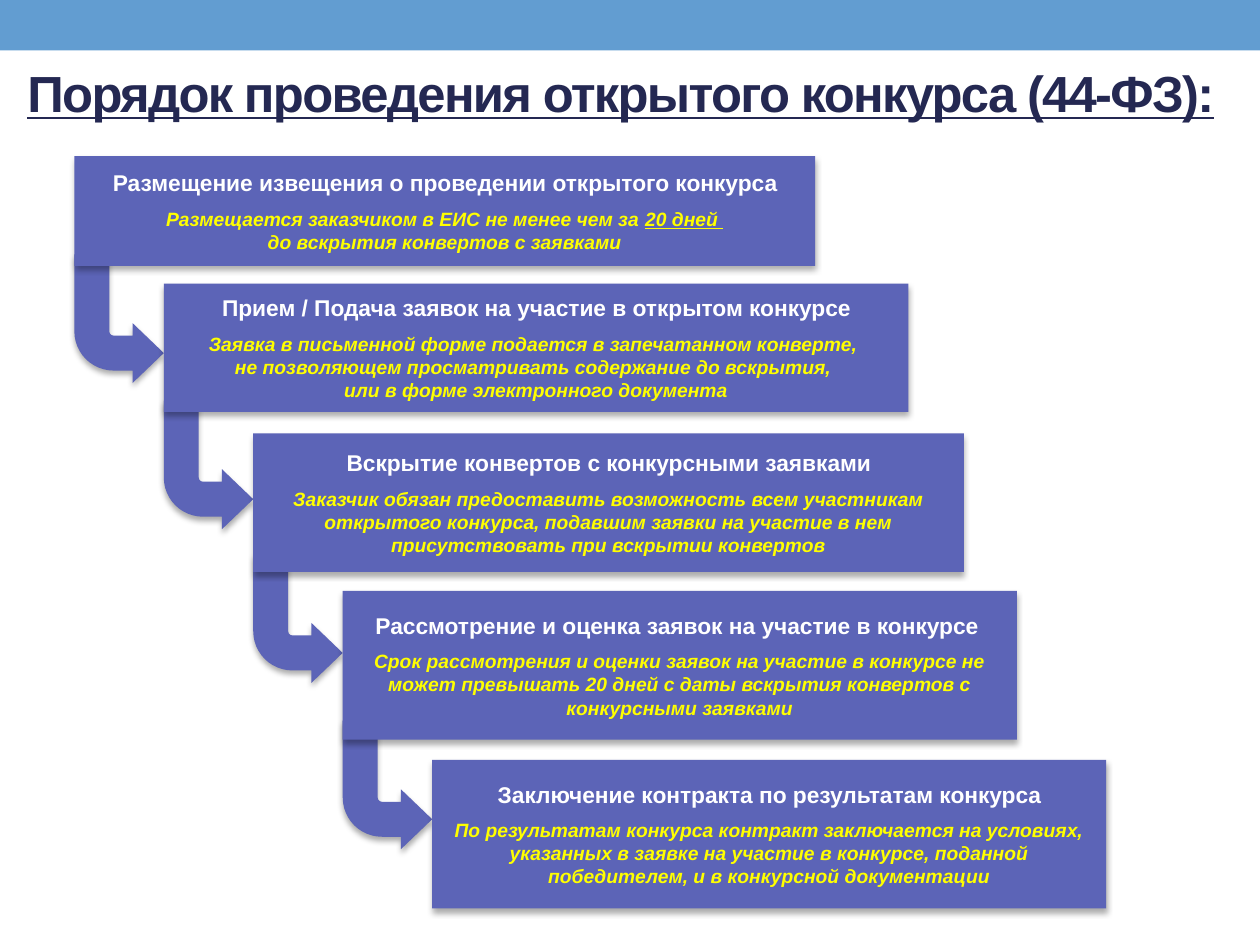
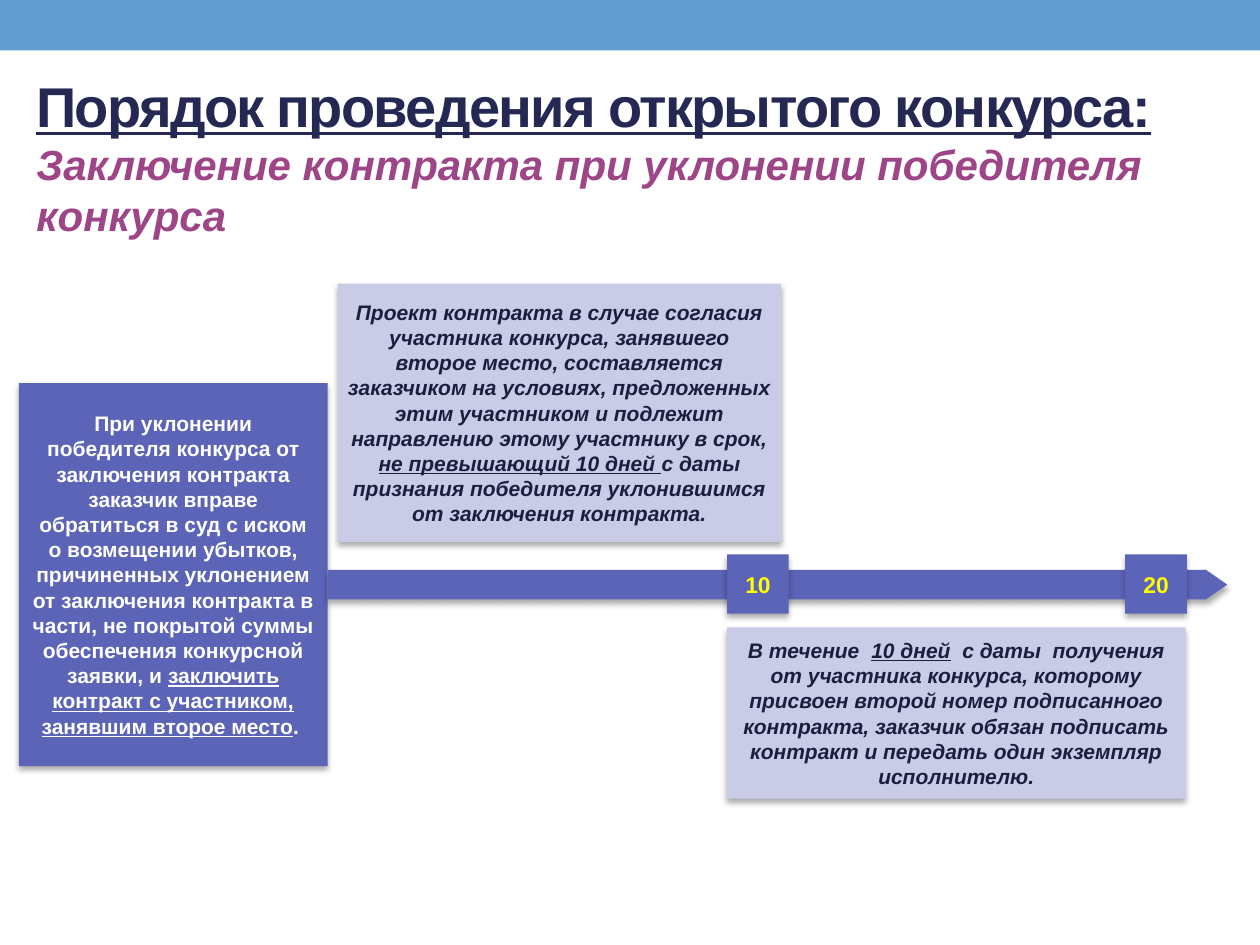
from lxml.etree import SubElement
from pptx import Presentation
from pptx.dml.color import RGBColor
from pptx.enum.shapes import MSO_SHAPE
from pptx.enum.text import MSO_ANCHOR, PP_ALIGN
from pptx.oxml.ns import qn
from pptx.util import Pt

PX = 9144
FONT = "Arial"
SKY, INDIGO, LAVENDER = "629DD1", "5C64B7", "C9CBE7"
NAVY, INK, PLUM = "242852", "1B1E3E", "9D4586"
WHITE, YELLOW, BLACK = "FFFFFF", "FFFF00", "000000"

STEP_SHIFT = 71
BEND_HEIGHT = 102
BEND_TOPS = (202, 318, 440, 572)

STEPS = [
    (124, 588, 87, "Размещение извещения о проведении открытого конкурса",
     [("Размещается заказчиком в ЕИС не менее чем за ", False), ("20 дней \v", True),
      ("до вскрытия конвертов с заявками", False)]),
    (225, 591, 102, "Прием / Подача заявок на участие в открытом конкурсе",
     [("Заявка в письменной форме подается в запечатанном конверте, \v"
       "не позволяющем просматривать содержание до вскрытия, \v"
       "или в форме электронного документа", False)]),
    (344, 564, 110, "Вскрытие конвертов с конкурсными заявками",
     [("Заказчик обязан предоставить возможность всем участникам открытого конкурса, "
       "подавшим заявки на участие в нем присутствовать при вскрытии конвертов", False)]),
    (469, 535, 118, "Рассмотрение и оценка заявок на участие в конкурсе ",
     [("Срок рассмотрения и оценки заявок на участие в конкурсе не может превышать "
       "20 дней с даты вскрытия конвертов с конкурсными заявками", False)]),
    (603, 535, 118, "Заключение контракта по результатам конкурса",
     [("По результатам конкурса контракт заключается на условиях, указанных в заявке "
       "на участие в конкурсе, поданной победителем, и в конкурсной документации", False)]),
]

EVASION = [
    ("При уклонении победителя конкурса от заключения контракта заказчик вправе "
     "обратиться в суд с иском о возмещении убытков, причиненных уклонением от "
     "заключения контракта в части, не покрытой суммы обеспечения конкурсной заявки, и ", False),
    ("заключить контракт с участником, занявшим второе место", True),
    (". ", False),
]
DRAFT = [
    ("Проект контракта в случае согласия участника конкурса, занявшего второе место, "
     "составляется заказчиком на условиях, предложенных этим участником и подлежит "
     "направлению этому участнику в срок, ", False),
    ("не превышающий 10 дней ", True),
    ("с даты признания победителя уклонившимся\vот заключения контракта.", False),
]
SIGNING = [
    ("В течение  ", False),
    ("10 дней", True),
    ("  с даты  получения от участника конкурса, которому присвоен второй номер "
     "подписанного контракта, заказчик обязан подписать контракт и передать один "
     "экземпляр исполнителю.", False),
]


def rgb(code):
    return RGBColor.from_string(code)


class Deck:
    """Holds the shared style and the slide being filled."""

    def __init__(self):
        self.show = Presentation()
        self.show.slide_width, self.show.slide_height = 1000 * PX, 750 * PX
        self.slide = None

    def new_slide(self):
        self.slide = self.show.slides.add_slide(self.show.slide_layouts[6])
        self.shape(MSO_SHAPE.RECTANGLE, (0, 0, 1000, 40), SKY, shadow=False)

    def shape(self, kind, place, fill, adjustments=(), shadow=True):
        figure = self.slide.shapes.add_shape(kind, *(n * PX for n in place))
        figure.fill.solid()
        figure.fill.fore_color.rgb = rgb(fill)
        figure.line.fill.background()
        figure.shadow.inherit = False
        for index, value in enumerate(adjustments):
            figure.adjustments[index] = value
        if shadow:
            self.cast_shadow(figure)
        return figure

    def cast_shadow(self, figure):
        effects = figure.element.spPr.find(qn("a:effectLst"))
        outer = SubElement(effects, qn("a:outerShdw"), blurRad=str(Pt(3.5)),
                           dist=str(Pt(2.2)), dir="5400000", rotWithShape="0")
        color = SubElement(outer, qn("a:srgbClr"), val=BLACK)
        SubElement(color, qn("a:alpha"), val="32000")

    def bend(self, place):
        arrow = self.shape(MSO_SHAPE.BENT_ARROW, place, INDIGO, (0.391, 0.335, 0.349, 0.438))
        arrow.element.spPr.find(qn("a:xfrm")).set("flipV", "1")

    def add_runs(self, paragraph, parts, size, color, italic=False, spacing=0):
        for words, underlined in parts:
            for index, line in enumerate(words.split("\v")):
                if index:
                    paragraph.add_line_break()
                if not line:
                    continue
                run = paragraph.add_run()
                run.text = line
                font = run.font
                font.name, font.size, font.bold = FONT, Pt(size), True
                font.italic, font.underline = italic, underlined
                font.color.rgb = rgb(color)
                if spacing:
                    run._r.get_or_add_rPr().set("spc", str(spacing))

    def title(self, place, text, size, subtitle=None):
        frame = self.slide.shapes.add_textbox(*(n * PX for n in place)).text_frame
        frame.word_wrap = True
        self.add_runs(frame.paragraphs[0], [(text, True)], size, NAVY, spacing=-100)
        if subtitle:
            self.add_runs(frame.add_paragraph(), [(subtitle, False)], 24, PLUM, italic=True)

    def box(self, place, fill, paragraphs, margin=10):
        frame = self.shape(MSO_SHAPE.RECTANGLE, place, fill).text_frame
        frame.word_wrap = True
        frame.vertical_anchor = MSO_ANCHOR.MIDDLE
        frame.margin_left = frame.margin_right = margin * PX
        for index, (parts, size, color, italic) in enumerate(paragraphs):
            paragraph = frame.add_paragraph() if index else frame.paragraphs[0]
            paragraph.alignment = PP_ALIGN.CENTER
            paragraph.space_after = Pt(6 if index < len(paragraphs) - 1 else 0)
            self.add_runs(paragraph, parts, size, color, italic)


def build_procedure(deck):
    deck.new_slide()
    deck.title((12, 44, 976, 59), "Порядок проведения открытого конкурса (44-ФЗ):", 29)
    lefts = [59 + STEP_SHIFT * index for index in range(len(STEPS))]
    for left, top in zip(lefts, BEND_TOPS):
        deck.bend((left, top, STEP_SHIFT, BEND_HEIGHT))
    for left, (top, width, height, heading, details) in zip(lefts, STEPS):
        deck.box((left, top, width, height), INDIGO,
                 [([(heading, False)], 13, WHITE, False), (details, 11, YELLOW, True)])


def build_evasion(deck):
    deck.new_slide()
    deck.title((19, 52, 961, 145), "Порядок проведения открытого конкурса:", 32,
               "Заключение контракта при уклонении победителя конкурса")
    deck.box((15, 304, 245, 304), INDIGO, [(EVASION, 12, WHITE, False)])
    deck.box((577, 498, 364, 136), LAVENDER, [(SIGNING, 12, INK, True)])
    deck.shape(MSO_SHAPE.RIGHT_ARROW, (260, 452, 714, 24), INDIGO, (0.975, 0.722))
    for left, day in ((577, "10"), (893, "20")):
        deck.box((left, 440, 49, 47), INDIGO, [([(day, False)], 13, YELLOW, False)])
    deck.box((268, 225, 352, 205), LAVENDER, [(DRAFT, 12, INK, True)], margin=8)


def main():
    deck = Deck()
    build_procedure(deck)
    build_evasion(deck)
    deck.show.save("out.pptx")


if __name__ == "__main__":
    main()
